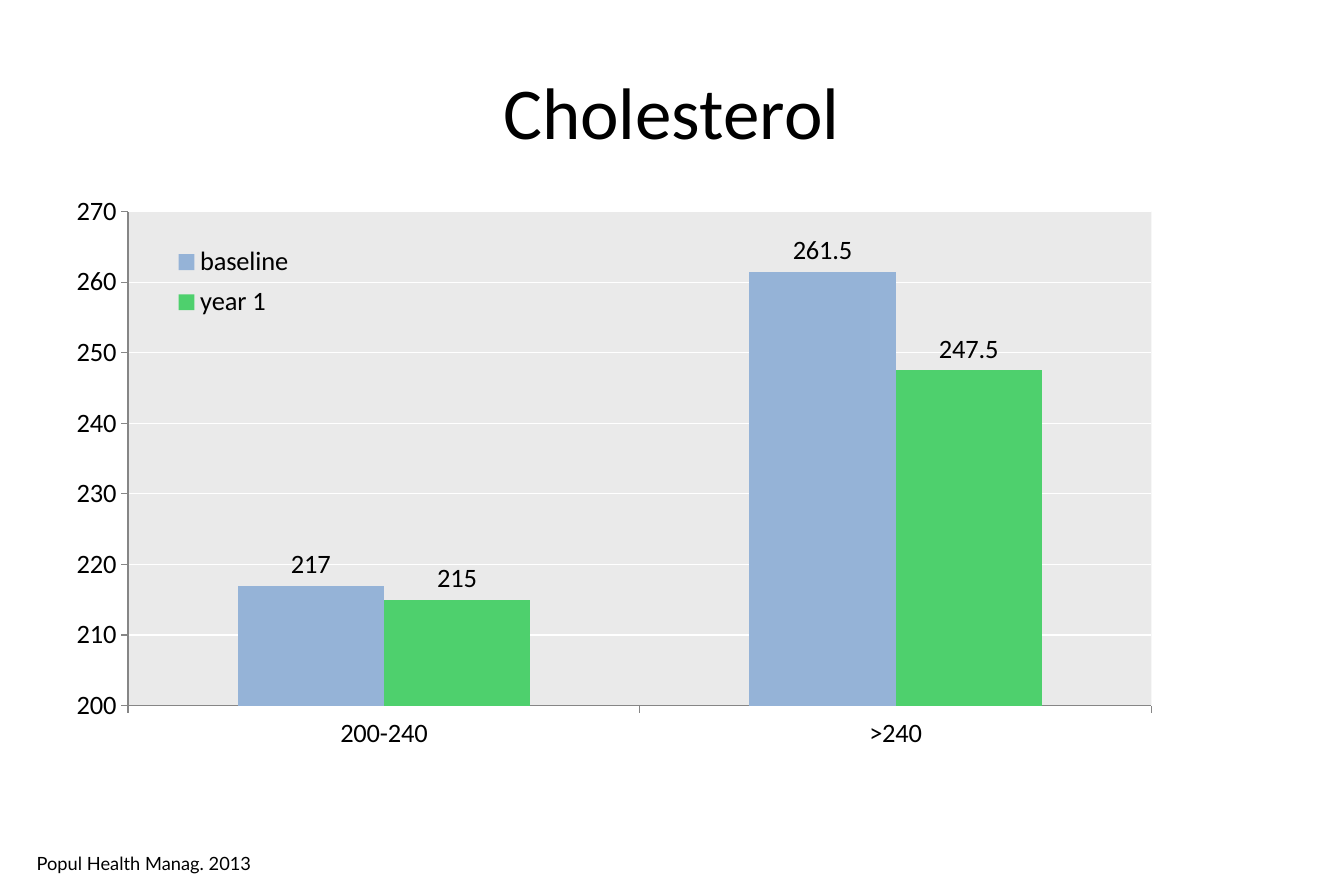
from lxml.etree import SubElement
from pptx import Presentation
from pptx.chart.data import CategoryChartData
from pptx.dml.color import RGBColor
from pptx.enum.chart import XL_CHART_TYPE, XL_LABEL_POSITION, XL_LEGEND_POSITION, XL_TICK_MARK
from pptx.enum.text import MSO_ANCHOR, PP_ALIGN
from pptx.oxml import parse_xml
from pptx.oxml.ns import nsdecls, qn
from pptx.util import Pt

EMU_PER_PX = 7620  # 120 px to the inch


def px(length):
    return length * EMU_PER_PX


def color(hex_string):
    return RGBColor.from_string(hex_string)


def manual_layout(left, top, width, height, inner=False):
    """Return a chart layout element, measured as shares of the chart."""
    layout = parse_xml(f"<c:layout {nsdecls('c')}><c:manualLayout/></c:layout>")
    settings = [("layoutTarget", "inner")] if inner else []
    settings += [("xMode", "edge"), ("yMode", "edge"),
                 ("x", left), ("y", top), ("w", width), ("h", height)]
    for name, value in settings:
        SubElement(layout[0], qn(f"c:{name}")).set("val", str(value))
    return layout


class SlideBuilder:
    font = "Calibri"
    ink = "000000"
    axis_line = "868686"
    grid_line = "FFFFFF"
    plot_fill = "EAEAEA"

    def __init__(self, presentation):
        self.slide = presentation.slides.add_slide(presentation.slide_layouts[6])

    def style_font(self, font, size, name=None):
        font.size = Pt(size)
        font.name = name or self.font
        font.color.rgb = color(self.ink)

    def text(self, words, box, size, font=None, align=PP_ALIGN.LEFT, anchor=MSO_ANCHOR.TOP):
        frame = self.slide.shapes.add_textbox(*map(px, box)).text_frame
        frame.word_wrap = True
        frame.vertical_anchor = anchor
        paragraph = frame.paragraphs[0]
        paragraph.text = words
        paragraph.alignment = align
        self.style_font(paragraph.font, size, font)

    def column_chart(self, box, categories, series_list, size):
        data = CategoryChartData(number_format="General")
        data.categories = categories
        for name, values, _ in series_list:
            data.add_series(name, values)
        chart = self.slide.shapes.add_chart(
            XL_CHART_TYPE.COLUMN_CLUSTERED, *map(px, box), data).chart
        chart.has_title = False
        self.style_font(chart.font, size)

        # Columns and their values
        plot = chart.plots[0]
        plot.gap_width = 150
        plot.overlap = 0
        plot.vary_by_categories = False
        for series, (_, _, fill) in zip(plot.series, series_list):
            series.format.fill.solid()
            series.format.fill.fore_color.rgb = color(fill)
            labels = series.data_labels
            labels.show_value = True
            labels.position = XL_LABEL_POSITION.OUTSIDE_END
            self.style_font(labels.font, size)
        self.style_axes(chart)
        self.style_plot_area(chart)
        self.add_legend(chart, size)

    def style_axes(self, chart):
        for axis in (chart.category_axis, chart.value_axis):
            axis.major_tick_mark = XL_TICK_MARK.OUTSIDE
            axis.minor_tick_mark = XL_TICK_MARK.NONE
            axis.format.line.color.rgb = color(self.axis_line)
            axis.format.line.width = Pt(0.75)
        values = chart.value_axis
        values.minimum_scale, values.maximum_scale, values.major_unit = 200, 270, 10
        values.tick_labels.number_format = "General"
        values.tick_labels.number_format_is_linked = False
        grid = values.major_gridlines.format.line
        grid.color.rgb = color(self.grid_line)
        grid.width = Pt(0.75)

    def style_plot_area(self, chart):
        plot_area = chart.element.xpath("c:chart/c:plotArea")[0]
        for layout in plot_area.findall(qn("c:layout")):
            plot_area.remove(layout)
        plot_area.insert(0, manual_layout(0.044, 0.035, 0.933, 0.841, inner=True))
        plot_area.append(parse_xml(
            f"<c:spPr {nsdecls('c', 'a')}><a:solidFill>"
            f'<a:srgbClr val="{self.plot_fill}"/></a:solidFill></c:spPr>'))

    def add_legend(self, chart, size):
        chart.has_legend = True
        chart.legend.position = XL_LEGEND_POSITION.RIGHT
        chart.legend.include_in_layout = False
        self.style_font(chart.legend.font, size)
        legend = chart.element.xpath("c:chart/c:legend")[0]
        for layout in legend.findall(qn("c:layout")):
            legend.remove(layout)
        legend.find(qn("c:overlay")).addprevious(manual_layout(0.08, 0.08, 0.12, 0.15))


def main():
    presentation = Presentation()
    presentation.slide_width, presentation.slide_height = px(1350), px(900)
    builder = SlideBuilder(presentation)

    # Title
    builder.text("Cholesterol", (67, 36, 1215, 150), 44,
                 align=PP_ALIGN.CENTER, anchor=MSO_ANCHOR.MIDDLE)

    # Cholesterol levels by starting group
    builder.column_chart(
        (77, 192, 1105, 590), ["200-240", ">240"],
        [("baseline", (217, 261.5), "95B3D7"), ("year 1", (215, 247.5), "4ED06D")], 16)

    # Source
    builder.text("Popul Health Manag. 2013", (25, 850, 250, 40), 11, font="Lato")

    presentation.save("out.pptx")


if __name__ == "__main__":
    main()
